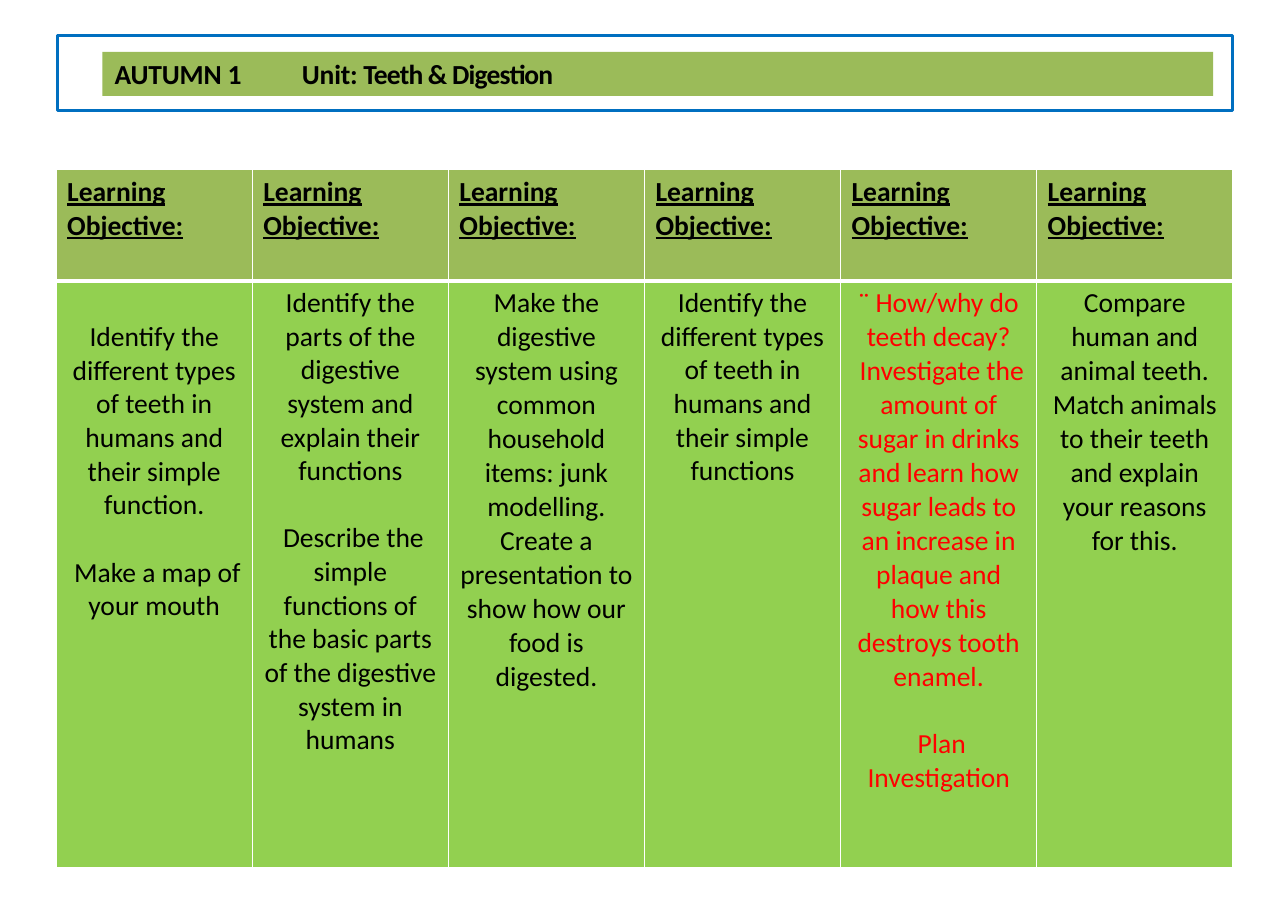
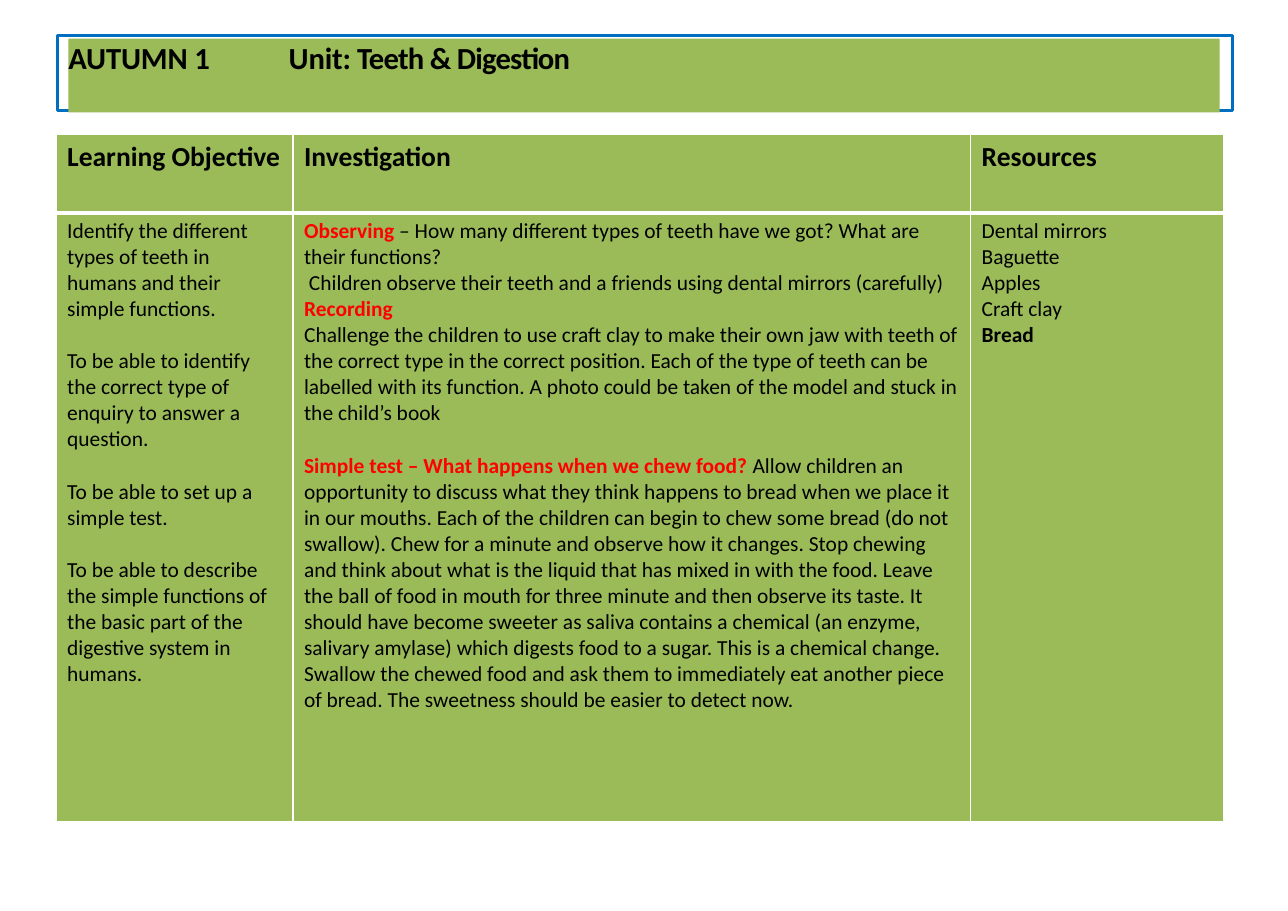
import pptx
import pptx.dml.color
import pptx.enum.shapes
import pptx.enum.text
import pptx.oxml.ns
import pptx.util
from lxml import etree

Inches, Pt = pptx.util.Inches, pptx.util.Pt
ALIGN = pptx.enum.text.PP_ALIGN
ANCHOR = pptx.enum.text.MSO_ANCHOR

FONT = "Calibri"
BLACK, WHITE, RED, BLUE = "000000", "FFFFFF", "FF0000", "006FC0"
OLIVE, LIME = "9BBB59", "92D050"
LINE_HEIGHT = 1.22  # height of one line relative to its font size

# Each body column is a list of groups, parted by the height of one line.
# A paragraph is a string, or a pair of a bold lead and the text after it.
OBJECTIVES = [
    {"top": 0.36, "groups": [
        ["Identify the different types of teeth in humans and their simple function."],
        [" Make a map of your mouth"]]},
    {"groups": [
        ["Identify the parts of the digestive system and explain their functions"],
        [" Describe the simple functions of the basic parts of the digestive "
         "system in humans"]]},
    {"spacing": 1.01, "groups": [
        ["Make the digestive system using common household items: junk modelling.",
         "Create a presentation to show how our food is digested."]]},
    {"groups": [
        ["Identify the different types of teeth in humans and their simple functions"]]},
    {"spacing": 1.01, "color": RED, "groups": [
        ["¨ How/why do teeth decay?",
         " Investigate the amount of sugar in drinks and learn how sugar leads to "
         "an increase in plaque and how this destroys tooth enamel."],
        [" Plan Investigation"]]},
    {"spacing": 1.01, "groups": [
        ["Compare human and animal teeth. Match animals to their teeth and explain "
         "your reasons for this."]]},
]

LESSON = [
    {"groups": [
        ["Identify the different types of teeth in humans and their simple functions."],
        ["To be able to identify the correct type of enquiry to answer a question."],
        ["To be able to set up a simple test."],
        ["To be able to describe the simple functions of the basic part of the "
         "digestive system in humans."]]},
    {"lead_color": RED, "groups": [
        [("Observing", " – How many different types of teeth have we got? What are "
                       "their functions?"),
         " Children observe their teeth and a friends using dental mirrors (carefully)",
         ("Recording", ""),
         "Challenge the children to use craft clay to make their own jaw with teeth of "
         "the correct type in the correct position. Each of the type of teeth can be "
         "labelled with its function. A photo could be taken of the model and stuck in "
         "the child’s book"],
        [("Simple test – What happens when we chew food? ",
          "Allow children an opportunity to discuss what they think happens to bread "
          "when we place it in our mouths. Each of the children can begin to chew some "
          "bread (do not swallow). Chew for a minute and observe how it changes. Stop "
          "chewing and think about what is the liquid that has mixed in with the food. "
          "Leave the ball of food in mouth for three minute and then observe its taste. "
          "It should have become sweeter as saliva contains a chemical (an enzyme, "
          "salivary amylase) which digests food to a sugar. This is a chemical change. "
          "Swallow the chewed food and ask them to immediately eat another piece of "
          "bread. The sweetness should be easier to detect now.")]]},
    {"groups": [
        ["Dental mirrors", "Baguette", "Apples", "Craft clay", ("Bread", "")]]},
]


def rgb(color):
    return pptx.dml.color.RGBColor.from_string(color)


def fill(target, color):
    target.fill.solid()
    target.fill.fore_color.rgb = rgb(color)


def set_font(font, size, color=BLACK, bold=False, underline=False):
    font.name, font.size = FONT, Pt(size)
    font.bold, font.underline = bold, underline
    font.color.rgb = rgb(color)


def add_frame(slide, layout, left, top, width, height):
    """Outline behind the title, kept on the layout so all slides share it."""
    frame = slide.shapes.add_shape(
        pptx.enum.shapes.MSO_SHAPE.RECTANGLE,
        Inches(left), Inches(top), Inches(width), Inches(height))
    frame.shadow.inherit = False
    frame.fill.background()
    frame.line.color.rgb = rgb(BLUE)
    frame.line.width = Pt(2)
    layout.shapes.element.append(frame.element)


def place_title(slide, box, size, tab, inset, anchor):
    """Green title band with the term and, after a tab, the unit."""
    title = slide.shapes.title
    title.left, title.top, title.width, title.height = map(Inches, box)
    fill(title, OLIVE)
    text = title.text_frame
    text.word_wrap = True
    text.auto_size = pptx.enum.text.MSO_AUTO_SIZE.NONE
    text.vertical_anchor = anchor
    text.margin_left = text.margin_right = Inches(inset)
    text.margin_top = text.margin_bottom = 0
    heading = text.paragraphs[0]
    heading.alignment = ALIGN.LEFT
    set_font(heading.font, size, bold=True)
    # Letter spacing in hundredths of a point
    for words, tracking in (("AUTUMN 1\tUnit:", -10), (" Teeth & Digestion", -50)):
        run = heading.add_run()
        run.text = words
        run._r.get_or_add_rPr().set("spc", str(tracking))
    # Tab stop, which belongs before the default run properties
    properties = heading._p.get_or_add_pPr()
    stops = etree.Element(pptx.oxml.ns.qn("a:tabLst"))
    etree.SubElement(stops, pptx.oxml.ns.qn("a:tab"),
                     pos=str(Inches(tab)), algn="l")
    properties.find(pptx.oxml.ns.qn("a:defRPr")).addprevious(stops)


def style_cell(cell, color, top_line, bottom_line):
    """White borders, then the fill that has to follow them."""
    properties = cell._tc.get_or_add_tcPr()
    for side, width in (("L", 1), ("R", 1), ("T", top_line), ("B", bottom_line)):
        border = etree.SubElement(properties, pptx.oxml.ns.qn("a:ln" + side),
                                  w=str(Pt(width)))
        solid = etree.SubElement(border, pptx.oxml.ns.qn("a:solidFill"))
        etree.SubElement(solid, pptx.oxml.ns.qn("a:srgbClr"), val=WHITE)
    fill(cell, color)


def write_column(cell, column, size, align):
    """Groups of paragraphs in one body cell."""
    color = column.get("color", BLACK)
    cell.margin_top = Inches(column.get("top", 0.05))
    text = cell.text_frame
    for g, group in enumerate(column["groups"]):
        for i, content in enumerate(group):
            first = g == 0 and i == 0
            paragraph = text.paragraphs[0] if first else text.add_paragraph()
            paragraph.alignment = align
            paragraph.line_spacing = column.get("spacing", 1.0)
            if g and i == 0:
                paragraph.space_before = Pt(round(size * LINE_HEIGHT))
            set_font(paragraph.font, size, color)
            lead, rest = content if isinstance(content, tuple) else ("", content)
            if lead:
                run = paragraph.add_run()
                run.text = lead
                run.font.bold = True
                run.font.color.rgb = rgb(column.get("lead_color", color))
            if rest:
                paragraph.add_run().text = rest


def add_plan(slide, left, top, widths, heights, headers, columns,
             body_fill, body_size, align, underline=False):
    """Table of one header row over one tall body row."""
    table = slide.shapes.add_table(
        2, len(widths), Inches(left), Inches(top),
        Inches(sum(widths)), Inches(sum(heights))).table
    table.horz_banding = False
    for row, height in zip(table.rows, heights):
        row.height = Inches(height)
    for c, (width, header, column) in enumerate(zip(widths, headers, columns)):
        table.columns[c].width = Inches(width)
        head, body = table.cell(0, c), table.cell(1, c)
        style_cell(head, OLIVE, 1, 3)
        style_cell(body, body_fill, 3, 1)
        head.text_frame.text = header
        set_font(head.text_frame.paragraphs[0].font, 18, bold=True, underline=underline)
        write_column(body, column, body_size, align)


def main():
    deck = pptx.Presentation()
    deck.slide_width, deck.slide_height = Inches(11.69), Inches(8.27)
    layout = deck.slide_layouts[5]

    # Overview of the half term
    overview = deck.slides.add_slide(layout)
    add_frame(overview, layout, 0.52, 0.32, 10.67, 0.68)
    place_title(overview, (0.93, 0.47, 10.08, 0.4), 18, 1.7, 0.11, ANCHOR.MIDDLE)
    add_plan(overview, 0.51, 1.54, [1.78] * 6, (1.01, 5.33),
             ["Learning Objective:"] * 6, OBJECTIVES,
             LIME, 18, ALIGN.CENTER, underline=True)

    # Lesson plan
    lesson = deck.slides.add_slide(layout)
    place_title(lesson, (0.62, 0.35, 10.45, 0.67), 20, 2, 0, ANCHOR.TOP)
    add_plan(lesson, 0.51, 1.22, (2.15, 6.15, 2.3), (0.71, 5.53),
             ("Learning Objective", "Investigation", "Resources"), LESSON,
             OLIVE, 14, ALIGN.LEFT)

    deck.save("out.pptx")


if __name__ == "__main__":
    main()
